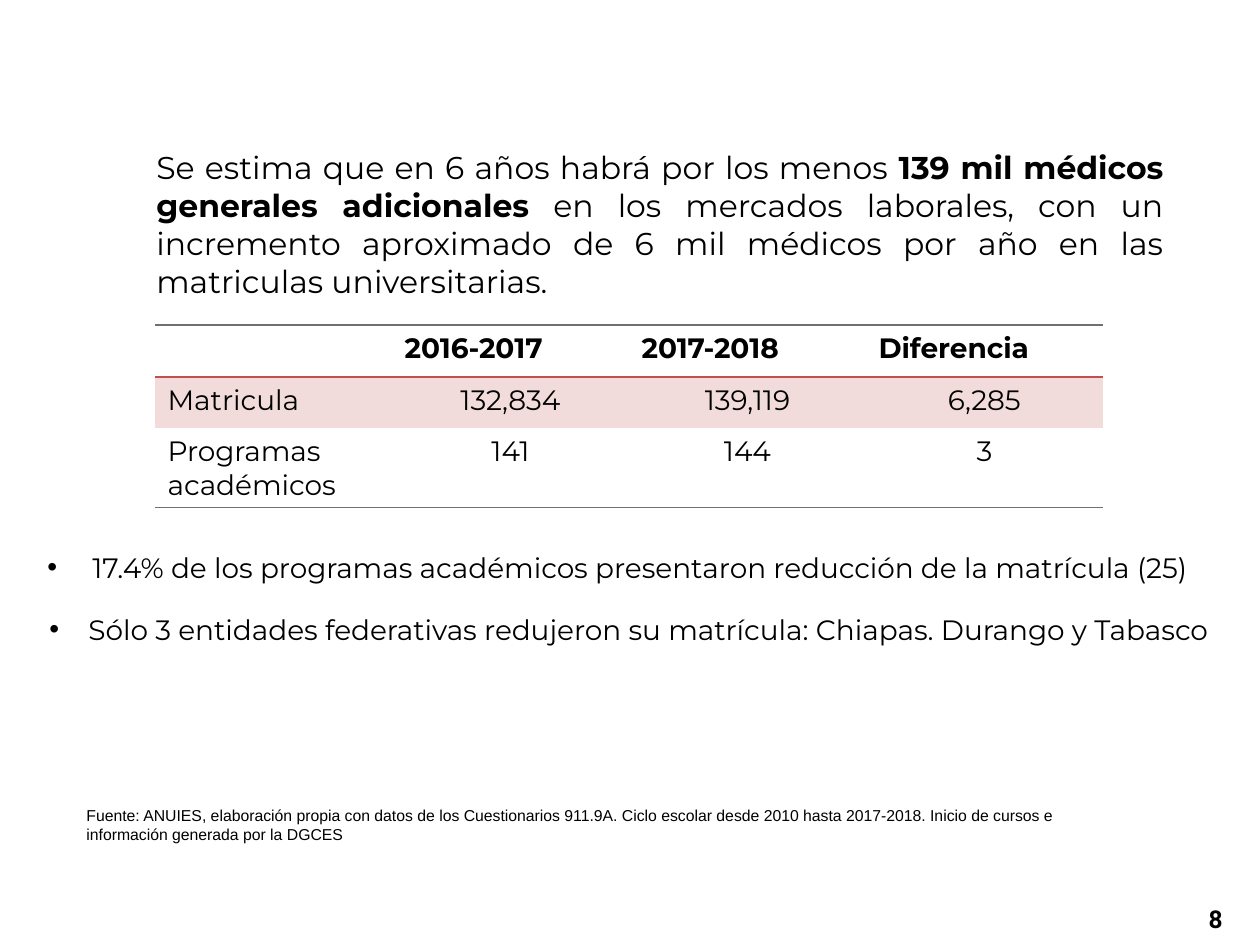
from dataclasses import dataclass

from lxml.etree import SubElement
from pptx import Presentation
from pptx.dml.color import RGBColor
from pptx.enum.text import PP_ALIGN
from pptx.oxml.ns import qn
from pptx.slide import Slide
from pptx.util import Emu, Pt

BLACK = RGBColor(0x00, 0x00, 0x00)
GREY = RGBColor(0x70, 0x70, 0x70)
RED = RGBColor(0xC0, 0x50, 0x4D)
PINK = RGBColor(0xF2, 0xDC, 0xDB)
PLAIN_TABLE = "{2D5ABB26-0587-4C30-8999-92F81FD0307C}"


def px(length):
    return Emu(round(length * 914400 / 126))


@dataclass
class SlideWriter:
    """Draws the text and table of one slide in a shared style."""

    page: Slide
    font: str = "Montserrat"
    color: RGBColor = BLACK

    def style(self, paragraph, size, bold=False, font=None, align=PP_ALIGN.LEFT):
        paragraph.alignment = align
        for span in paragraph.runs:
            span.font.name = font or self.font
            span.font.size = Pt(size)
            span.font.bold = bold
            span.font.color.rgb = self.color

    def text(self, left, top, width, height, wording, size, wrap=True, **look):
        box = self.page.shapes.add_textbox(px(left), px(top), px(width), px(height))
        box.text_frame.word_wrap = wrap
        paragraph = box.text_frame.paragraphs[0]
        for part in wording:
            paragraph.add_run().text = part
        self.style(paragraph, size, **look)
        return paragraph

    def bullet(self, left, top, width, height, wording, indent):
        paragraph = self.text(left, top, width, height, [wording], 16, wrap=False)
        properties = paragraph._p.get_or_add_pPr()
        properties.set("marL", str(px(indent)))
        properties.set("indent", str(-px(indent)))
        SubElement(properties, qn("a:buFont"), typeface="Arial")
        SubElement(properties, qn("a:buChar"), char="•")

    def border(self, cell, side, color, width):
        properties = cell._tc.get_or_add_tcPr()
        line = SubElement(properties, qn(f"a:{side}"), w=str(Pt(width)))
        fill = SubElement(line, qn("a:solidFill"))
        SubElement(fill, qn("a:srgbClr"), val=str(color))

    def table(self, left, top, column_width, heights, rows):
        frame = self.page.shapes.add_table(
            len(rows), len(rows[0]), px(left), px(top),
            px(column_width * len(rows[0])), px(sum(heights)))
        table = frame.table
        table.horz_banding = False
        table._tbl.tblPr.find(qn("a:tableStyleId")).text = PLAIN_TABLE
        for column in table.columns:
            column.width = px(column_width)
        for row, height in zip(table.rows, heights):
            row.height = px(height)
        for r, values in enumerate(rows):
            for c, value in enumerate(values):
                cell = table.cell(r, c)
                header = r == 0
                cell.text_frame.text = value
                align = PP_ALIGN.LEFT if header or c == 0 else PP_ALIGN.CENTER
                self.style(cell.text_frame.paragraphs[0], 16, bold=header, align=align)
                if header:
                    self.border(cell, "lnT", GREY, 0.75)
                    self.border(cell, "lnB", RED, 1)
                elif r == len(rows) - 1:
                    self.border(cell, "lnB", GREY, 0.75)
                if r == 1:
                    cell.fill.solid()
                    cell.fill.fore_color.rgb = PINK
                else:
                    cell.fill.background()


def main():
    deck = Presentation()
    deck.slide_width, deck.slide_height = px(1260), px(945)
    writer = SlideWriter(deck.slides.add_slide(deck.slide_layouts[6]))

    estimate = writer.text(
        144, 142, 1032, 165,
        ["Se estima que en 6 años habrá por los menos ",
         "139 mil médicos generales adicionales",
         " en los mercados laborales, con un incremento aproximado de 6 mil "
         "médicos por año en las matriculas universitarias."],
        18, align=PP_ALIGN.JUSTIFY)
    estimate.runs[1].font.bold = True

    writer.table(155, 325, 237, [52, 51, 79], [
        ["", "2016-2017", "2017-2018", "Diferencia"],
        ["Matricula", "132,834", "139,119", "6,285"],
        ["Programas académicos", "141", "144", "3"],
    ])

    writer.bullet(
        35, 544, 1189, 47,
        "17.4% de los programas académicos presentaron reducción de la matrícula (25)", 45)
    writer.bullet(
        37, 606, 1206, 81,
        "Sólo 3 entidades federativas redujeron su matrícula: Chiapas. Durango y Tabasco", 39)

    writer.text(
        74, 800, 1062, 50,
        ["Fuente: ANUIES, elaboración propia con datos de los Cuestionarios 911.9A. "
         "Ciclo escolar desde 2010 hasta 2017-2018. Inicio de cursos e "
         "información generada por la DGCES"],
        9, font="Arial")
    writer.text(941, 898, 294, 50, ["8"], 14, bold=True, font="Roboto", align=PP_ALIGN.RIGHT)

    deck.save("out.pptx")


if __name__ == "__main__":
    main()
